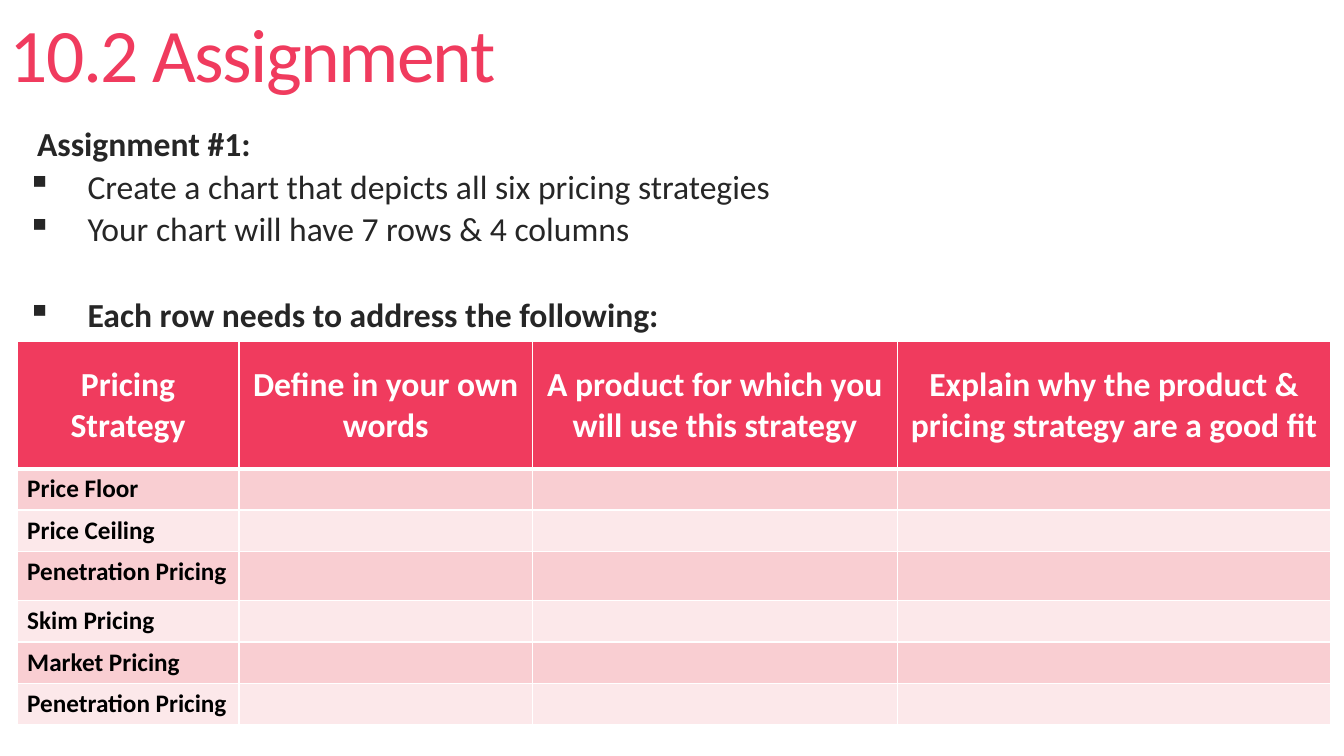
"""Build the 10.2 Assignment slide with its pricing strategy table."""
from dataclasses import dataclass

from lxml.etree import SubElement
from pptx import Presentation
from pptx.dml.color import RGBColor as RGB
from pptx.enum.text import MSO_ANCHOR as Anchor, PP_ALIGN as Align
from pptx.oxml.ns import qn
from pptx.util import Inches, Pt


@dataclass(frozen=True)
class Theme:
    face: str = "Calibri"
    accent: str = "F03B5E"
    ink: str = "262626"
    black: str = "000000"
    white: str = "FFFFFF"
    bands: tuple = ("F9CED2", "FCE8EA")
    title: int = 54
    body: int = 24
    label: int = 18


theme = Theme()


def style(para, size, color, bold=False):
    """Set the font of a paragraph."""
    font = para.font
    font.name, font.size, font.bold = theme.face, Pt(size), bold
    font.color.rgb = RGB.from_string(color)


def border(cell, side, width):
    """Add a white border to one side of a cell."""
    line = SubElement(cell._tc.get_or_add_tcPr(), qn(f"a:ln{side}"), w=str(Pt(width)))
    fill = SubElement(line, qn("a:solidFill"))
    SubElement(fill, qn("a:srgbClr"), val=theme.white)


deck = Presentation()
deck.slide_width, deck.slide_height = Inches(13.33), Inches(7.5)
slide = deck.slides.add_slide(deck.slide_layouts[6])

box = slide.shapes.add_textbox(Inches(0), Inches(-0.32), Inches(11.78), Inches(1.81))
frame = box.text_frame
frame.word_wrap = True
frame.vertical_anchor = Anchor.MIDDLE
head = frame.paragraphs[0]
head.text = "10.2 Assignment"
head.line_spacing = 0.85
style(head, theme.title, theme.accent)
head._p.pPr.find(qn("a:defRPr")).set("spc", "-120")

points = [
    ("Assignment #1:", True, None, 0.1, 13),
    ("Create a chart that depicts all six pricing strategies", False, "▪", 0.6, 6),
    ("Your chart will have 7 rows & 4 columns", False, "▪", 0.6, 6),
    ("Each row needs to address the following:", True, "▪", 0.6, 37),
]
box = slide.shapes.add_textbox(Inches(0.17), Inches(1.23), Inches(11.76), Inches(4.12))
frame = box.text_frame
frame.word_wrap = True
for i, (text, bold, mark, indent, gap) in enumerate(points):
    para = frame.add_paragraph() if i else frame.paragraphs[0]
    para.text = text
    para.line_spacing = 0.85
    para.space_before = Pt(gap)
    props = para._p.get_or_add_pPr()
    props.set("marL", str(Inches(indent)))
    if mark:
        props.set("indent", str(-Inches(indent)))
        SubElement(props, qn("a:buChar"), char=mark)
    style(para, theme.body, theme.ink, bold)

heads = [
    "Pricing Strategy",
    "Define in your own words",
    "A product for which you will use this strategy",
    "Explain why the product & pricing strategy are a good fit",
]
plans = [
    "Price Floor", "Price Ceiling", "Penetration Pricing",
    "Skim Pricing", "Market Pricing", "Penetration Pricing",
]
widths = [2.2, 2.91, 3.62, 4.3]
heights = [1.26, 0.41, 0.41, 0.49, 0.41, 0.41, 0.41]
rows = [heads] + [[plan, "", "", ""] for plan in plans]
table = slide.shapes.add_table(
    len(rows), len(heads), Inches(0.17), Inches(3.39),
    Inches(sum(widths)), Inches(sum(heights)),
).table
for col, width in zip(table.columns, widths):
    col.width = Inches(width)
for row, height in zip(table.rows, heights):
    row.height = Inches(height)

for r, row in enumerate(rows):
    for c, text in enumerate(row):
        cell = table.cell(r, c)
        for side in "LRTB":
            thick = (r, side) in ((0, "B"), (1, "T"))
            border(cell, side, 3 if thick else 1)
        cell.fill.solid()
        shade = theme.bands[(r - 1) % 2] if r else theme.accent
        cell.fill.fore_color.rgb = RGB.from_string(shade)
        cell.text = text
        para = cell.text_frame.paragraphs[0]
        if r:
            style(para, theme.label, theme.black, True)
        else:
            cell.vertical_anchor = Anchor.MIDDLE
            para.alignment = Align.CENTER
            style(para, theme.body, theme.white, True)

deck.save("out.pptx")
